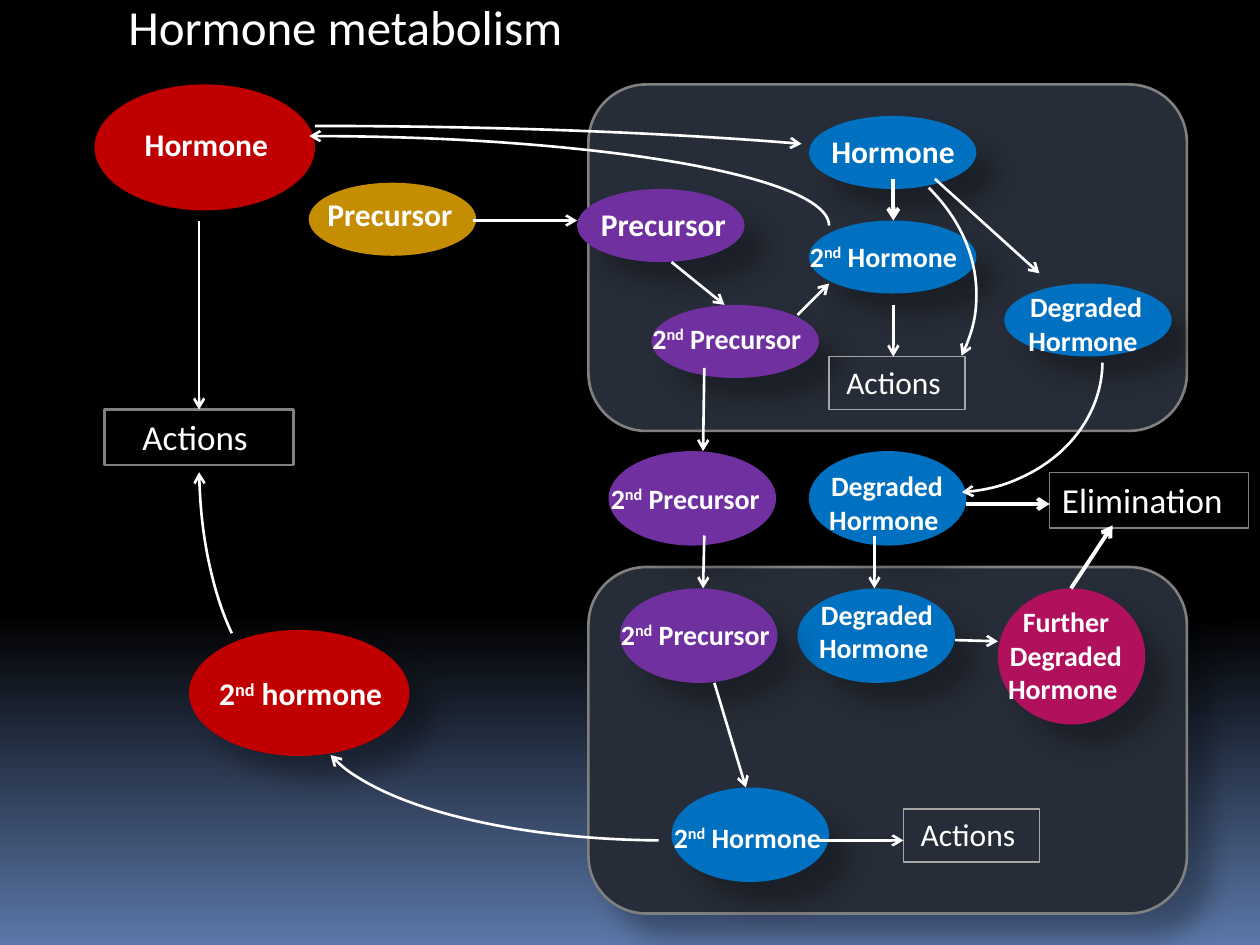
import copy

import pptx
import pptx.dml.color
import pptx.enum.shapes
import pptx.enum.text
import pptx.oxml
import pptx.oxml.ns
import pptx.util

Inches = pptx.util.Inches
qn = pptx.oxml.ns.qn
SHAPE = pptx.enum.shapes.MSO_SHAPE
ALIGN = pptx.enum.text.PP_ALIGN

COLORS = {
    "black": "000000", "haze": "5B77A8", "cell": "272D38", "white": "FFFFFF",
    "gray": "808080", "silver": "A6A6A6", "red": "C00000", "gold": "C58D01",
    "purple": "7030A0", "blue": "0070C0", "magenta": "B0105C",
}


def rgb(name):
    return pptx.dml.color.RGBColor.from_string(COLORS[name])


def child(parent, tag, **attrs):
    el = parent.makeelement(qn(tag), {k: str(v) for k, v in attrs.items()})
    parent.append(el)
    return el


def set_background(slide):
    fill = slide.background.fill
    fill.gradient()
    fill.gradient_angle = 270
    stops = slide._element.find(".//" + qn("a:gsLst"))
    stops.insert(1, copy.deepcopy(stops[0]))
    rules = ((0, "black"), (0.65, "black"), (1, "haze"))
    for stop, (position, color) in zip(fill.gradient_stops, rules):
        stop.position = position
        stop.color.rgb = rgb(color)


def add_shape(slide, box, kind, at, fill=None, line=None, width=1.5):
    x, y, w, h = at
    s = slide.shapes.add_shape(
        kind, Inches(box[0] + x), Inches(box[1] + y), Inches(w), Inches(h))
    s.shadow.inherit = False
    if fill:
        s.fill.solid()
        s.fill.fore_color.rgb = rgb(fill)
    else:
        s.fill.background()
    if line:
        s.line.color.rgb = rgb(line)
        s.line.width = pptx.util.Pt(width)
    else:
        s.line.fill.background()
    return s


def add_shadow(s):
    effects = s._element.spPr.find(qn("a:effectLst"))
    shadow = child(effects, "a:outerShdw", blurRad=pptx.util.Pt(15),
                   dist=pptx.util.Pt(18), dir=45 * 60000, algn="tl", rotWithShape=0)
    color = child(shadow, "a:srgbClr", val=COLORS["black"])
    child(color, "a:alpha", val=30000)


def write(s, text, size, bold=False, align=ALIGN.LEFT):
    tf = s.text_frame
    tf.word_wrap = True
    tf.auto_size = pptx.enum.text.MSO_AUTO_SIZE.SHAPE_TO_FIT_TEXT
    tf.vertical_anchor = pptx.enum.text.MSO_ANCHOR.TOP
    p = tf.paragraphs[0]
    p.alignment = align
    p.font.size = pptx.util.Pt(size)
    p.font.name = "Calibri"
    p.font.bold = bold
    p.font.color.rgb = rgb("white")
    parts = ("2", "nd", text[3:]) if text.startswith("2nd") else (text,)
    for part in parts:
        r = p.add_run()
        r.text = part
        if part == "nd":
            r.font._element.set("baseline", "30000")


def add_label(slide, box, text, at, size, bold=True, lines=1):
    x, y, w = at
    tb = slide.shapes.add_textbox(
        Inches(box[0] + x), Inches(box[1] + y),
        Inches(w), Inches(0.1 + size * lines / 60))
    write(tb, text, size, bold, ALIGN.CENTER if lines > 1 else ALIGN.LEFT)


def add_nodes(slide, box, nodes):
    for at, color, *_ in nodes:
        add_shadow(add_shape(slide, box, SHAPE.OVAL, at, color))
    for _, _, text, at, size in nodes:
        lines = len(text.split()) if "Degraded" in text else 1
        add_label(slide, box, text, at, size, lines=lines)


def add_frame(slide, box, text, at, size, line, width, align=ALIGN.CENTER):
    s = add_shape(slide, box, SHAPE.RECTANGLE, at, line=line, width=width)
    write(s, text, size, align=align)


def add_arrows(slide, box, arrows, width=1.5):
    for x1, y1, x2, y2 in arrows:
        c = slide.shapes.add_connector(
            pptx.enum.shapes.MSO_CONNECTOR.STRAIGHT,
            Inches(box[0] + x1), Inches(box[1] + y1),
            Inches(box[0] + x2), Inches(box[1] + y2))
        c.line.color.rgb = rgb("white")
        c.line.width = pptx.util.Pt(width)
        child(c.line._get_or_add_ln(), "a:tailEnd", type="arrow")
        child(c._element.spPr, "a:effectLst")


def add_arc(slide, box, at, start, end, arrow="a:tailEnd"):
    s = add_shape(slide, box, SHAPE.ARC, at, line="white")
    s.adjustments[0] = start * 0.6
    s.adjustments[1] = end * 0.6
    child(s.line._get_or_add_ln(), arrow, type="arrow")


def add_cell(slide, box):
    add_shadow(add_shape(slide, box, SHAPE.ROUNDED_RECTANGLE,
                         (0, 0, box[2], box[3]), "cell", "gray"))


def upper_cell(slide, box):
    add_cell(slide, box)
    size = (1.33, 0.58)
    add_nodes(slide, box, [
        ((-0.09, 0.83, *size), "purple", "Precursor", (0, 0.91, 1.5), 18),
        ((0.5, 1.75, *size), "purple", "2nd Precursor", (0.41, 1.83, 1.5), 16),
        ((1.75, 0.25, *size), "blue", "Hormone", (1.83, 0.33, 1.58), 18),
        ((1.75, 1.08, *size), "blue", "2nd Hormone", (1.66, 1.18, 1.83), 16),
        ((3.3, 1.58, *size), "blue", "Degraded Hormone ", (3.16, 1.58, 1.58), 16),
    ])
    add_frame(slide, box, "Actions ", (1.91, 2.16, 1.08, 0.42), 18, "silver", 1)
    add_arrows(slide, box, [
        (0.66, 1.41, 1.08, 1.75), (1.66, 1.83, 1.91, 1.58),
        (2.42, 1.75, 2.42, 2.16), (2.75, 0.75, 3.58, 1.5),
    ])
    add_arrows(slide, box, [(2.42, 0.75, 2.42, 1.08)], 2.25)
    add_arc(slide, box, (-0.75, 0.25, 3.83, 2.83), 331.19, 15.2)


def lower_cell(slide, box):
    add_cell(slide, box)
    size = (1.25, 0.75)
    add_nodes(slide, box, [
        ((3.25, 0.17, 1.17, 1.08), "magenta", "Further Degraded Hormone ",
         (3, 0.25, 1.58), 16),
        ((1.66, 0.17, *size), "blue", "Degraded Hormone ", (1.58, 0.19, 1.42), 16),
        ((0.25, 0.17, *size), "purple", "2nd Precursor", (0.16, 0.35, 1.5), 16),
        ((0.66, 1.75, *size), "blue", "2nd Hormone", (0.58, 1.96, 1.5), 16),
    ])
    add_frame(slide, box, "Actions ", (2.5, 1.92, 1.08, 0.42), 18, "silver", 1)
    add_arrows(slide, box, [
        (2.91, 0.58, 3.25, 0.59), (1, 0.92, 1.25, 1.75), (1.83, 2.17, 2.5, 2.17),
    ])


def between_cells(slide, box):
    add_nodes(slide, box, [
        ((0.16, 0.16, 1.33, 0.75), "purple", "2nd Precursor", (0.08, 0.35, 1.5), 16),
        ((1.75, 0.16, 1.25, 0.75), "blue", "Degraded Hormone ", (1.58, 0.25, 1.58), 16),
    ])
    add_frame(slide, box, "Elimination", (3.66, 0.33, 1.58, 0.44), 20,
              "gray", 0.75, ALIGN.LEFT)
    add_arrows(slide, box, [(3, 0.58, 3.66, 0.58)], 2.25)


def circulation(slide, box):
    add_nodes(slide, box, [
        ((0, 0, 1.75, 1), "red", "Hormone", (0.3, 0.27, 1.58), 18),
        ((1.7, 0.78, 1.33, 0.58), "gold", "Precursor", (1.75, 0.83, 1.5), 18),
        ((0.75, 4.33, 1.75, 1), "red", "2nd hormone", (0.89, 4.63, 1.58), 18),
    ])
    add_frame(slide, box, "Actions ", (0.08, 2.58, 1.5, 0.44), 20, "gray", 1.5)
    add_arrows(slide, box, [(0.83, 1.08, 0.83, 2.58)])
    add_arc(slide, box, (0.83, 1.16, 1.58, 3.67), 111.27, 173.95)


def transport(slide, box):
    add_arrows(slide, box, [
        (3.75, 1.75, 4.58, 1.75), (5.59, 2.92, 5.58, 3.58),
        (5.59, 4.25, 5.58, 4.67), (6.94, 4.25, 6.94, 4.67),
    ])
    add_arrows(slide, box, [(8.5, 4.67, 8.83, 4.17)], 2.25)
    add_arc(slide, box, (-3.75, 1, 12.5, 1.33), 270, 352.29)
    add_arc(slide, box, (-1.67, 1.08, 8.25, 1.42), 270, 0, "a:headEnd")
    add_arc(slide, box, (2.5, 4.75, 5.58, 1.92), 93.79, 173.95)
    add_arc(slide, box, (6.33, 1.83, 2.42, 2.08), 0.43, 84.77)


def main():
    prs = pptx.Presentation()
    prs.slide_width, prs.slide_height = Inches(10), Inches(7.5)
    slide = prs.slides.add_slide(prs.slide_layouts[6])
    set_background(slide)
    upper_cell(slide, (4.67, 0.67, 4.75, 2.75))
    lower_cell(slide, (4.67, 4.5, 4.75, 2.75))
    between_cells(slide, (4.67, 3.42, 5.33, 1.08))
    circulation(slide, (0.75, 0.67, 3.03, 5.33))
    transport(slide, (0, 0, 10, 7.5))
    add_label(slide, (0, 0), "Hormone metabolism", (0.92, -0.08, 3.75), 28, bold=False)
    prs.save("out.pptx")


if __name__ == "__main__":
    main()
